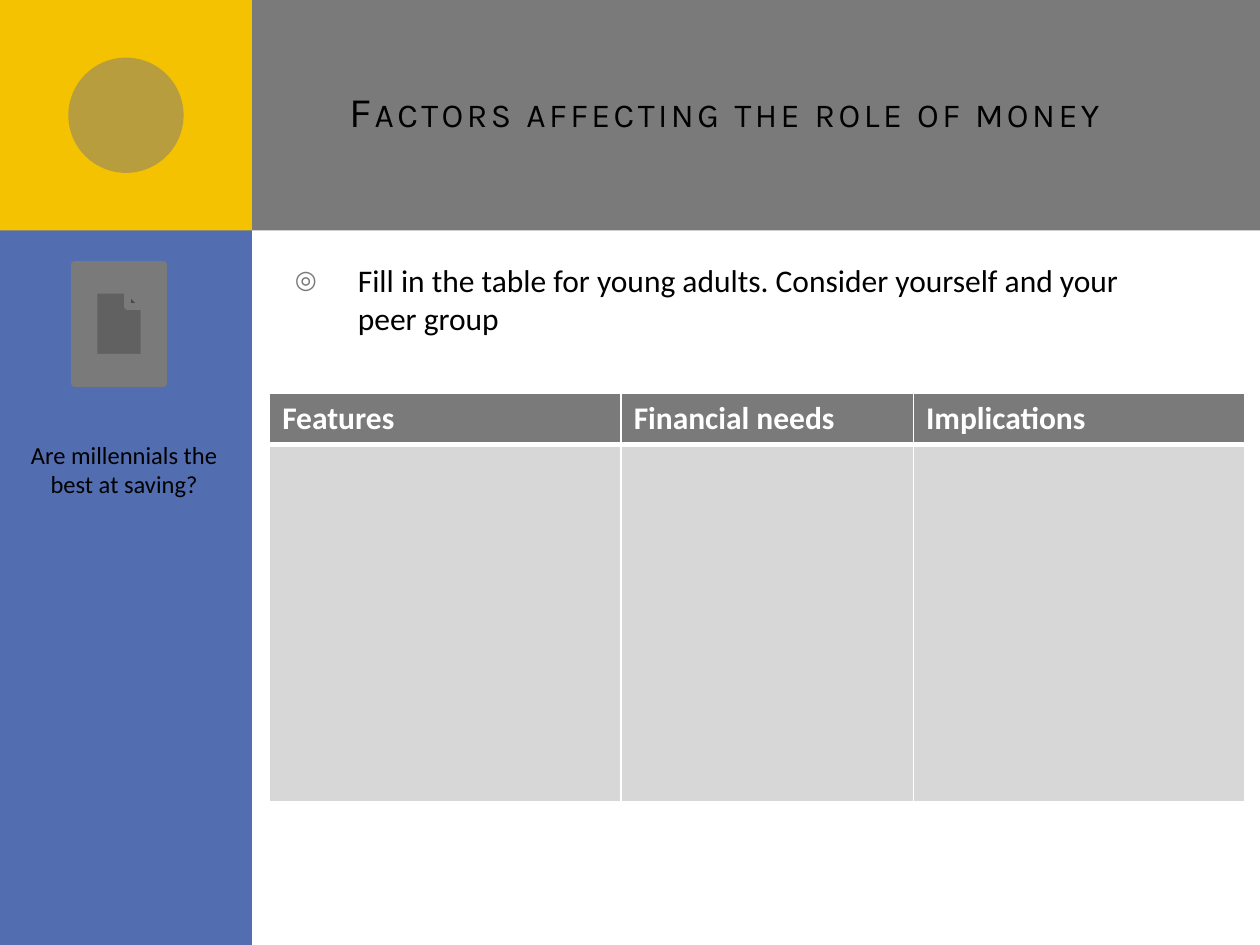
import dataclasses

import lxml.etree
import pptx
import pptx.dml.color
import pptx.enum.shapes
import pptx.enum.text
import pptx.oxml.ns
import pptx.util

SHAPE = pptx.enum.shapes.MSO_SHAPE
ALIGN = pptx.enum.text.PP_ALIGN
ANCHOR = pptx.enum.text.MSO_ANCHOR
AUTO_SIZE = pptx.enum.text.MSO_AUTO_SIZE


@dataclasses.dataclass(frozen=True)
class Theme:
    gray: str = "7A7A7A"
    blue: str = "526DB0"
    yellow: str = "F5C201"
    cell: str = "D7D7D7"
    white: str = "FFFFFF"
    black: str = "000000"
    heading_font: str = "Karla"
    body_font: str = "Calibri"
    title_size: int = 24
    body_size: int = 18
    caption_size: int = 14


def color(value):
    return pptx.dml.color.RGBColor.from_string(value)


def add_node(parent, tag, **attributes):
    node = lxml.etree.SubElement(parent, pptx.oxml.ns.qn(tag))
    for name, value in attributes.items():
        node.set(name, str(value))
    return node


class SlideBuilder:
    COLUMNS = 100
    ROWS = 75

    def __init__(self, presentation, theme):
        self.theme = theme
        self.column = presentation.slide_width / self.COLUMNS
        self.row = presentation.slide_height / self.ROWS
        self.slide = presentation.slides.add_slide(presentation.slide_layouts[1])

    def box(self, left, top, width, height):
        return (round(left * self.column), round(top * self.row),
                round(width * self.column), round(height * self.row))

    def place(self, shape, area):
        shape.left, shape.top, shape.width, shape.height = self.box(*area)
        self.slide.shapes._spTree.append(shape._element)

    def add_run(self, paragraph, text, size, font=None, ink=None, bold=False):
        run = paragraph.add_run()
        run.text = text
        run.font.name = font or self.theme.body_font
        run.font.size = pptx.util.Pt(size)
        run.font.color.rgb = color(ink or self.theme.black)
        run.font.bold = bold
        return run

    def panel(self, kind, area, fill, line_width=0, opacity=100):
        shape = self.slide.shapes.add_shape(kind, *self.box(*area))
        shape.shadow.inherit = False
        shape.fill.solid()
        shape.fill.fore_color.rgb = color(fill)
        if opacity < 100:
            fill_color = shape.fill._xPr.find(".//" + pptx.oxml.ns.qn("a:srgbClr"))
            add_node(fill_color, "a:alpha", val=opacity * 1000)
        if line_width:
            shape.line.color.rgb = color(fill)
            shape.line.width = pptx.util.Pt(line_width)
        else:
            shape.line.fill.background()

    def title(self, area, text):
        shape = self.slide.shapes.title
        self.place(shape, area)
        frame = shape.text_frame
        frame.word_wrap = True
        frame.auto_size = AUTO_SIZE.NONE
        frame.vertical_anchor = ANCHOR.MIDDLE
        paragraph = frame.paragraphs[0]
        paragraph.alignment = ALIGN.LEFT
        run = self.add_run(paragraph, text, self.theme.title_size,
                           self.theme.heading_font)
        properties = run.font._element
        properties.set("spc", "200")
        properties.set("cap", "small")

    def bullet(self, area, text):
        shape = self.slide.placeholders[1]
        self.place(shape, area)
        frame = shape.text_frame
        frame.word_wrap = True
        frame.auto_size = AUTO_SIZE.NONE
        paragraph = frame.paragraphs[0]
        paragraph.level = 2
        paragraph.space_before = pptx.util.Pt(18)
        properties = paragraph._p.get_or_add_pPr()
        indent = pptx.util.Inches(0.5)
        properties.set("marL", str(indent))
        properties.set("indent", str(-indent))
        bullet_color = add_node(properties, "a:buClr")
        add_node(bullet_color, "a:srgbClr", val=self.theme.gray)
        add_node(properties, "a:buSzPct", val=80000)
        add_node(properties, "a:buChar", char="◎")
        self.add_run(paragraph, text, self.theme.body_size)

    def caption(self, area, text):
        shape = self.slide.shapes.add_textbox(*self.box(*area))
        frame = shape.text_frame
        frame.word_wrap = True
        frame.auto_size = AUTO_SIZE.SHAPE_TO_FIT_TEXT
        paragraph = frame.paragraphs[0]
        paragraph.alignment = ALIGN.CENTER
        self.add_run(paragraph, text, self.theme.caption_size)

    def style_cell(self, cell, fill, borders):
        properties = cell._tc.get_or_add_tcPr()
        for side, width in zip("LRTB", borders):
            line = add_node(properties, "a:ln" + side, w=pptx.util.Pt(width))
            line_fill = add_node(line, "a:solidFill")
            add_node(line_fill, "a:srgbClr", val=self.theme.white)
        cell.fill.solid()
        cell.fill.fore_color.rgb = color(fill)

    def table(self, left, top, widths, heights, headers):
        area = self.box(left, top, sum(widths), sum(heights))
        table = self.slide.shapes.add_table(len(heights), len(widths), *area).table
        for table_row, height in zip(table.rows, heights):
            table_row.height = round(height * self.row)
        for index, (width, header) in enumerate(zip(widths, headers)):
            table.columns[index].width = round(width * self.column)
            head = table.cell(0, index)
            self.style_cell(head, self.theme.gray, (1, 1, 1, 3))
            self.add_run(head.text_frame.paragraphs[0], header,
                         self.theme.body_size, ink=self.theme.white, bold=True)
            self.style_cell(table.cell(1, index), self.theme.cell, (1, 1, 3, 1))


def main():
    presentation = pptx.Presentation()
    presentation.slide_width = pptx.util.Inches(10)
    presentation.slide_height = pptx.util.Inches(7.5)
    theme = Theme()
    builder = SlideBuilder(presentation, theme)

    sidebar, header = 20, 18.3
    builder.panel(SHAPE.RECTANGLE, (5, 0, 95, header), theme.gray)
    builder.panel(SHAPE.RECTANGLE, (0, 0, sidebar, builder.ROWS), theme.blue)
    builder.panel(SHAPE.RECTANGLE, (0, 0, sidebar, header), theme.yellow)
    diameter = header / 2
    builder.panel(SHAPE.OVAL, ((sidebar - diameter) / 2, (header - diameter) / 2,
                               diameter, diameter), theme.gray, opacity=50)

    builder.title((26.7, 2.5, 68.3, 12.5), "Factors affecting the role of money")
    builder.bullet((22.4, 20.2, 68.3, 42),
                   "Fill in the table for young adults. "
                   "Consider yourself and your peer group")
    builder.table(21.4, 31.2, (27.9, 23.2, 26.3), (4.1, 28.3),
                  ("Features", "Financial needs", "Implications"))
    builder.panel(SHAPE.ACTION_BUTTON_DOCUMENT, (5.9, 21, 7.1, 9.4),
                  theme.gray, line_width=4)
    builder.caption((0.4, 34.4, 18.9, 5.7), "Are millennials the best at saving?")

    presentation.save("out.pptx")


if __name__ == "__main__":
    main()
